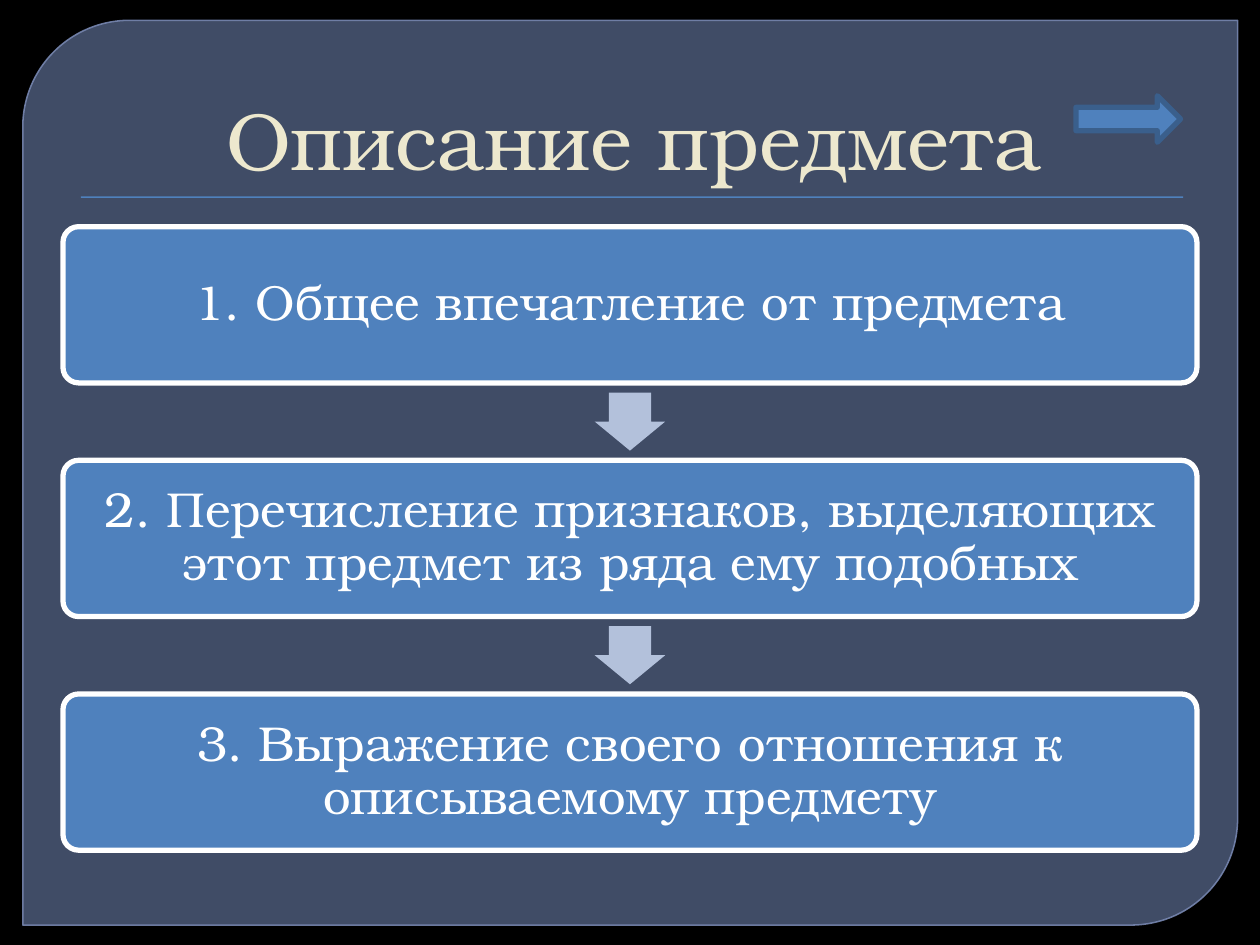
from dataclasses import dataclass

from lxml import etree
from pptx import Presentation
from pptx.dml.color import RGBColor
from pptx.enum.shapes import MSO_SHAPE
from pptx.enum.text import MSO_ANCHOR, MSO_AUTO_SIZE, PP_ALIGN
from pptx.oxml.ns import qn
from pptx.shapes.autoshape import Shape
from pptx.slide import Slide
from pptx.text.text import TextFrame
from pptx.util import Cm, Pt

ROUNDED = MSO_SHAPE.ROUNDED_RECTANGLE
DIAGONAL = MSO_SHAPE.ROUND_2_DIAG_RECTANGLE
RECTANGLE = MSO_SHAPE.RECTANGLE
DOWN_ARROW = MSO_SHAPE.DOWN_ARROW
RIGHT_ARROW = MSO_SHAPE.RIGHT_ARROW
CENTER = PP_ALIGN.CENTER
BOTTOM = MSO_ANCHOR.BOTTOM
MIDDLE = MSO_ANCHOR.MIDDLE
NO_AUTOFIT = MSO_AUTO_SIZE.NONE


@dataclass(frozen=True)
class Theme:
    font: str = "TeX Gyre Bonum"
    title_size: float = 46
    step_size: float = 28
    background: str = "000000"
    panel: str = "63759D"
    panel_line: str = "7989B3"
    panel_opacity: tuple[int, int] = (65, 88)
    accent: str = "4F81BD"
    accent_line: str = "3A5F8C"
    step_arrow: str = "B3C1DB"
    title: str = "EDE8CE"
    light: str = "FFFFFF"


@dataclass(frozen=True)
class Box:
    left: float
    top: float
    width: float
    height: float


@dataclass(frozen=True)
class Style:
    fill: str
    line: str | None = None
    line_width: float = 3
    adjustments: tuple[float, ...] = ()


THEME = Theme()
STEPS = (
    "1. Общее впечатление от предмета",
    "2. Перечисление признаков, выделяющих этот предмет из ряда ему подобных",
    "3. Выражение своего отношения к описываемому предмету",
)
FIRST_STEP = Box(1.27, 4.57, 22.86, 3.15)
STEP_GAP = 1.56
ARROW_WIDTH, ARROW_HEIGHT = 1.42, 1.17


def draw_shape(slide: Slide, kind: MSO_SHAPE, box: Box, style: Style) -> Shape:
    shape = slide.shapes.add_shape(
        kind, Cm(box.left), Cm(box.top), Cm(box.width), Cm(box.height)
    )
    shape.shadow.inherit = False
    for index, value in enumerate(style.adjustments):
        shape.adjustments[index] = value
    shape.fill.solid()
    shape.fill.fore_color.rgb = RGBColor.from_string(style.fill)
    if style.line:
        shape.line.color.rgb = RGBColor.from_string(style.line)
        shape.line.width = Pt(style.line_width)
    else:
        shape.line.fill.background()
    return shape


def write_text(frame: TextFrame, text: str, size: float, color: str) -> None:
    frame.word_wrap = True
    frame.auto_size = NO_AUTOFIT
    paragraph = frame.paragraphs[0]
    paragraph.alignment = CENTER
    run = paragraph.add_run()
    run.text = text
    run.font.name = THEME.font
    run.font.size = Pt(size)
    run.font.color.rgb = RGBColor.from_string(color)


def draw_panel(slide: Slide) -> None:
    panel = draw_shape(
        slide,
        DIAGONAL,
        Box(0.46, 0.41, 24.49, 18.24),
        Style(THEME.panel, THEME.panel_line, 0.87, (0.118, 0)),
    )
    colors = panel.element.spPr.iter(qn("a:srgbClr"))
    for color, opacity in zip(colors, THEME.panel_opacity):
        etree.SubElement(color, qn("a:alpha"), val=str(opacity * 1000))


def draw_title(slide: Slide, text: str) -> None:
    title = slide.shapes.title
    title.left, title.top = Cm(1.27), Cm(0.71)
    title.width, title.height = Cm(22.86), Cm(3.18)
    frame = title.text_frame
    frame.vertical_anchor = BOTTOM
    frame.margin_left = Cm(0.4)
    write_text(frame, text, THEME.title_size, THEME.title)
    slide.shapes.element.append(title.element)


def draw_step(slide: Slide, box: Box, text: str) -> None:
    step = draw_shape(
        slide, ROUNDED, box, Style(THEME.accent, THEME.light, adjustments=(0.1,))
    )
    frame = step.text_frame
    frame.vertical_anchor = MIDDLE
    frame.margin_left = frame.margin_right = Cm(0.2)
    frame.margin_top = frame.margin_bottom = Cm(0.2)
    write_text(frame, text, THEME.step_size, THEME.light)
    frame.paragraphs[0].line_spacing = 0.9
    frame.paragraphs[0].space_after = Pt(10)


def draw_step_arrow(slide: Slide, above: Box) -> None:
    box = Box(
        above.left + (above.width - ARROW_WIDTH) / 2,
        above.top + above.height + (STEP_GAP - ARROW_HEIGHT) / 2,
        ARROW_WIDTH,
        ARROW_HEIGHT,
    )
    draw_shape(
        slide, DOWN_ARROW, box, Style(THEME.step_arrow, adjustments=(0.6, 0.5))
    )


def main() -> None:
    presentation = Presentation()
    presentation.slide_width, presentation.slide_height = Cm(25.4), Cm(19.05)
    slide = presentation.slides.add_slide(presentation.slide_layouts[5])
    slide.background.fill.solid()
    slide.background.fill.fore_color.rgb = RGBColor.from_string(THEME.background)

    draw_panel(slide)
    draw_shape(slide, RECTANGLE, Box(1.63, 3.96, 22.22, 0.03), Style(THEME.accent))
    draw_title(slide, "Описание предмета")

    for index, text in enumerate(STEPS):
        top = FIRST_STEP.top + index * (FIRST_STEP.height + STEP_GAP)
        box = Box(FIRST_STEP.left, top, FIRST_STEP.width, FIRST_STEP.height)
        draw_step(slide, box, text)
        if index < len(STEPS) - 1:
            draw_step_arrow(slide, box)

    draw_shape(
        slide,
        RIGHT_ARROW,
        Box(21.69, 1.93, 2.11, 0.94),
        Style(THEME.accent, THEME.accent_line),
    )
    presentation.save("out.pptx")


if __name__ == "__main__":
    main()
